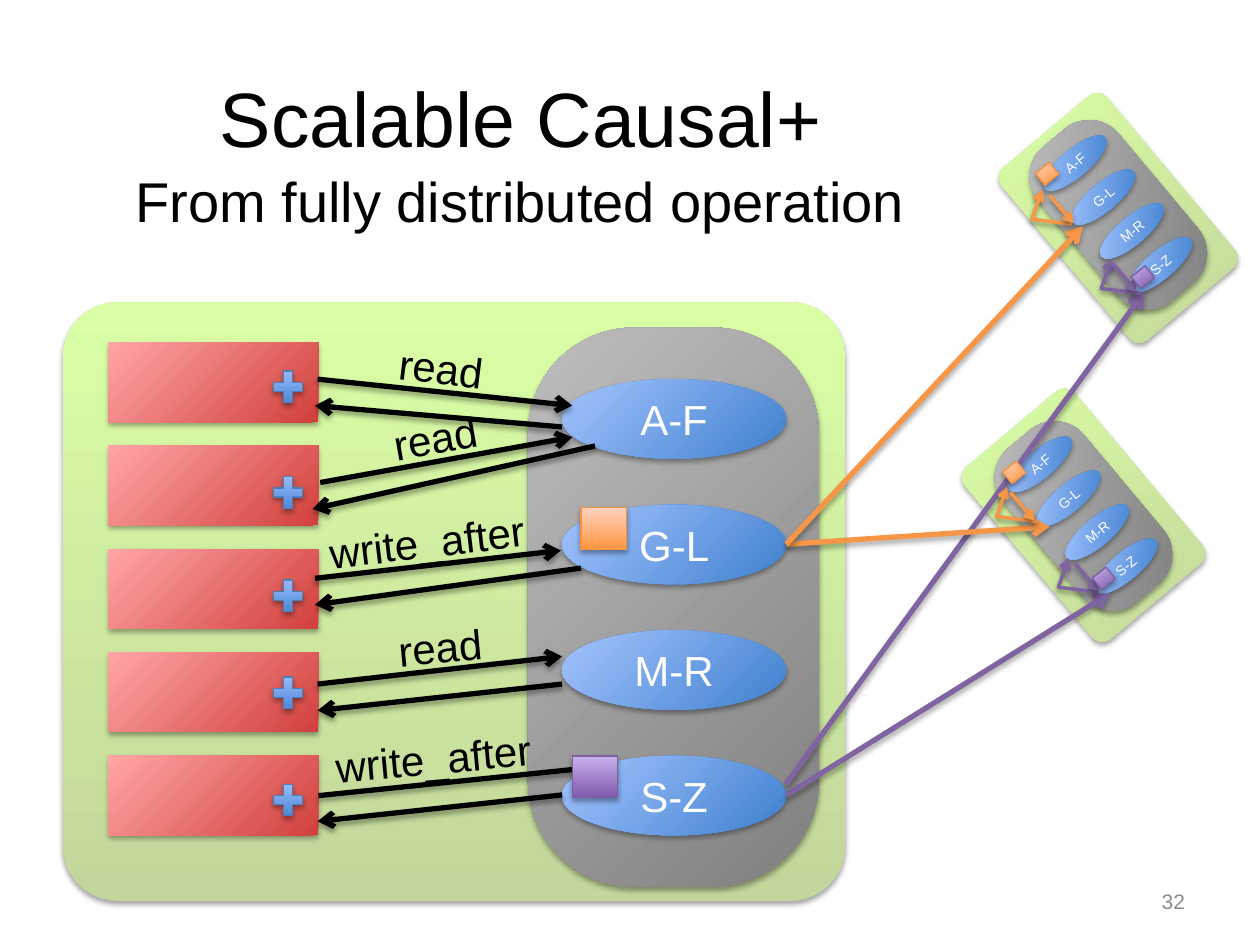
from lxml.etree import SubElement
from pptx import Presentation
from pptx.dml.color import RGBColor
from pptx.enum.shapes import MSO_CONNECTOR, MSO_SHAPE
from pptx.enum.text import MSO_ANCHOR, PP_ALIGN
from pptx.oxml.ns import qn
from pptx.util import Pt

BLACK = RGBColor(0, 0, 0)
WHITE = RGBColor(255, 255, 255)
PAGE = RGBColor(0x8C, 0x8C, 0x8C)
AMBER = RGBColor(0xF7, 0x96, 0x46)
PLUM = RGBColor(0x80, 0x64, 0xA2)
RIM = {
    AMBER: RGBColor(0xF6, 0x92, 0x40),
    PLUM: RGBColor(0x7D, 0x60, 0xA0),
}
EDGE = RGBColor(0x4B, 0x7E, 0xBC)
LIME = (RGBColor(0xC3, 0xD6, 0x9B), RGBColor(0xDA, 0xFF, 0xA5))
GREY = (RGBColor(0x80, 0x80, 0x80), RGBColor(0xBD, 0xBD, 0xBD))
BLUE = (RGBColor(0x3F, 0x80, 0xCE), RGBColor(0xA4, 0xC4, 0xFF))
RED = (RGBColor(0xD1, 0x40, 0x3C), RGBColor(0xFF, 0xA6, 0xA5))
TINT = {
    AMBER: (RGBColor(0xFF, 0x95, 0x3E), RGBColor(0xFF, 0xD2, 0xBD)),
    PLUM: (RGBColor(0x7F, 0x5B, 0xAB), RGBColor(0xC8, 0xB0, 0xED)),
}
NAMES = ("A-F", "G-L", "M-R", "S-Z")
ROWS = (
    ("read", 64, (159, -3.6), 7, 13, (119.5, 20.9, 265, 36), (259.2, 48.2, 118, 36)),
    ("read", 64, (155.5, -23), 350.1, 14.4, (121, 20.9, 265, -5), (278, 0, 116.6, 36)),
    ("write_after", 132.5, (118.8, -23), 353.3, 14.4,
     (118, 16.6, 258.5, 0.7), (270, 10.8, 118, 31.7)),
    ("read", 64, (158.4, -21.6), 354.7, 10.8,
     (119.5, 18, 259.2, 2.2), (259.2, 18, 119.5, 33.1)),
    ("write_after", 132.5, (122.4, -17.3), 354.7, 13,
     (120, 22.7, 278, 6.5), (259.2, 22.3, 119.5, 37.4)),
)
LINKS = (
    (PLUM, 449.3, 454.3, 634.3, 339.1),
    (PLUM, 449.3, 447.8, 653.8, 167),
    (AMBER, 449.3, 311, 599.8, 301),
    (AMBER, 449.3, 311, 618.5, 129.6),
)
TRAILS = (
    (AMBER, (589.7, 108.7), (10.1, 2.9), (3.6, -13.7)),
    (AMBER, (569.5, 278.6), (7.9, 2.9), (5, -13)),
    (PLUM, (629.3, 148.3), (6.5, 2.2), (18.7, 5.8)),
    (PLUM, (604.8, 319), (9.4, 2.9), (20.9, 7.2)),
)


def shade(shape, alpha=35):
    """Give a shape or connector a soft shadow below it."""
    props = shape._element.spPr
    for old in props.findall(qn("a:effectLst")):
        props.remove(old)
    glow = SubElement(SubElement(props, qn("a:effectLst")), qn("a:outerShdw"),
                      blurRad=str(Pt(3.1)), dist=str(Pt(1.8)),
                      dir="5400000", rotWithShape="0")
    tone = SubElement(glow, qn("a:srgbClr"), val="000000")
    SubElement(tone, qn("a:alpha"), val=str(alpha * 1000))


def block(shapes, kind, box, tones, angle=90, turn=0, rim=None, round=None):
    """Add a shape with a two-tone gradient and a shadow."""
    shape = shapes.add_shape(kind, *map(Pt, box))
    shape.rotation = turn
    if round is not None:
        shape.adjustments[0] = round
    shape.fill.gradient()
    shape.fill.gradient_angle = angle
    for stop, tone in zip(shape.fill.gradient_stops, tones):
        stop.color.rgb = tone
    if rim is None:
        shape.line.fill.background()
    else:
        shape.line.color.rgb = rim
        shape.line.width = Pt(0.75)
    shade(shape)
    return shape


def write(shape, text, size, color, align, anchor):
    """Set one line of text in a shape."""
    frame = shape.text_frame
    frame.text = text
    frame.vertical_anchor = anchor
    para = frame.paragraphs[0]
    para.alignment = align
    font = para.runs[0].font
    font.name, font.size, font.color.rgb = "Arial", Pt(size), color


def label(shapes, box, text, size, color=BLACK, align=PP_ALIGN.CENTER,
          anchor=MSO_ANCHOR.TOP, wrap=True, turn=0):
    """Add a text box."""
    area = shapes.add_textbox(*map(Pt, box))
    area.rotation = turn
    area.text_frame.word_wrap = wrap
    write(area, text, size, color, align, anchor)


def stroke(shape, color, width, alpha):
    """Style a line with an arrowhead at its end."""
    shape.line.color.rgb = color
    shape.line.width = Pt(width)
    SubElement(shape.line._get_or_add_ln(), qn("a:tailEnd"), type="arrow")
    shade(shape, alpha)


def arrow(shapes, ends, color, width=3, alpha=38):
    """Add a straight arrow."""
    line = shapes.add_connector(MSO_CONNECTOR.STRAIGHT, *map(Pt, ends))
    stroke(line, color, width, alpha)
    return line


def nodes(shapes, box, step, size, turn=0):
    """Lay out the four key ranges from the first one's box."""
    x, y, w, h = box
    for i, name in enumerate(NAMES):
        spot = (x + i * step[0], y + i * step[1], w, h)
        node = block(shapes, MSO_SHAPE.OVAL, spot, BLUE, 135, turn)
        frame = node.text_frame
        frame.word_wrap = False
        frame.margin_left = frame.margin_right = 0
        frame.margin_top = frame.margin_bottom = 0
        write(node, name, size, WHITE, PP_ALIGN.CENTER, MSO_ANCHOR.MIDDLE)


def client(shapes, box, row):
    """Draw one client with its request and its reply."""
    x, y, w, h = box
    text, wide, spot, turn, drop, ask, reply = row
    card = block(shapes, MSO_SHAPE.RECTANGLE, box, RED, 135)
    block(shapes, MSO_SHAPE.MATH_PLUS, (x + 91.4, y + drop, 22.3, 24.5),
          BLUE, rim=EDGE)
    for ends in (reply, ask):
        x1, y1, x2, y2 = ends
        line = arrow(shapes, (x + x1, y + y1, x + x2, y + y2), BLACK)
        if abs(x1 - w) < 1 and abs(y1 - h / 2) < 1:
            line.begin_connect(card, 3)
    label(shapes, (x + spot[0], y + spot[1], wide, 36), text, 24,
          align=PP_ALIGN.LEFT, wrap=False, turn=turn)


def center(shapes, box):
    """Draw the main data center with clients and key ranges."""
    x, y, w, h = box
    block(shapes, MSO_SHAPE.ROUNDED_RECTANGLE, box, LIME, round=0.092)
    block(shapes, MSO_SHAPE.ROUNDED_RECTANGLE,
          (x + 265.7, y + 14.4, 166.3, 319.7), GREY, 135, round=0.365)
    nodes(shapes, (x + 285.1, y + 43.9, 128.2, 45.4), (0, 71.75), 24)
    for i, row in enumerate(ROWS):
        client(shapes, (x + 26, y + 23 + 59.04 * i, 120, 45.4), row)
    for color, dx, dy in ((AMBER, 296, 117.4), (PLUM, 291, 259.2)):
        block(shapes, MSO_SHAPE.RECTANGLE, (x + dx, y + dy, 26, 23.8),
              TINT[color], rim=RIM[color])


def site(shapes, box, drop):
    """Draw a tilted remote data center."""
    x, y, w, h = box
    left, top = x + (w - 59.8) / 2, y + drop
    block(shapes, MSO_SHAPE.ROUNDED_RECTANGLE, box, LIME, turn=320, round=0.092)
    block(shapes, MSO_SHAPE.ROUNDED_RECTANGLE, (left, top, 59.8, 114.5),
          GREY, 135, 320, round=0.365)
    nodes(shapes, (left - 17.6, top + 19.8, 45.4, 15.8), (16.3, 19.4), 8, 320)


def trail(shapes, color, spot, start, mark):
    """Draw a dependency check loop and its data item."""
    x, y = spot
    path = shapes.build_freeform(Pt(x + 23), Pt(y + 19.4))
    path.add_line_segments([(Pt(x), Pt(y + 16.6)), (Pt(x + 5.8), Pt(y))], close=False)
    loop = path.convert_to_shape()
    loop.fill.background()
    stroke(loop, color, 2, 38)
    x1, y1 = x + start[0], y + start[1]
    arrow(shapes, (x1, y1, x1 + 13.7, y1 + 16), color, 2)
    block(shapes, MSO_SHAPE.RECTANGLE, (x + mark[0], y + mark[1], 10.1, 8.6),
          TINT[color], turn=321, rim=RIM[color])


def main():
    """Build the slide."""
    deck = Presentation()
    deck.slide_width, deck.slide_height = Pt(720), Pt(540)
    shapes = deck.slides.add_slide(deck.slide_layouts[6]).shapes
    label(shapes, (36, 21.6, 523.4, 90), "Scalable Causal+", 44,
          anchor=MSO_ANCHOR.MIDDLE)
    label(shapes, (46, 91.4, 502.6, 46), "From fully distributed operation", 32)
    center(shapes, (36, 172.8, 447, 342))
    site(shapes, (599.8, 60.5, 78.5, 128.2), 5)
    site(shapes, (578.2, 230.4, 82, 128.2), 7.2)
    for color, *ends in LINKS:
        arrow(shapes, ends, color, alpha=35)
    for item in TRAILS:
        trail(shapes, *item)
    label(shapes, (516.2, 500.4, 168, 28.8), "32", 12, PAGE, PP_ALIGN.RIGHT,
          MSO_ANCHOR.MIDDLE)
    deck.save("out.pptx")


if __name__ == "__main__":
    main()
